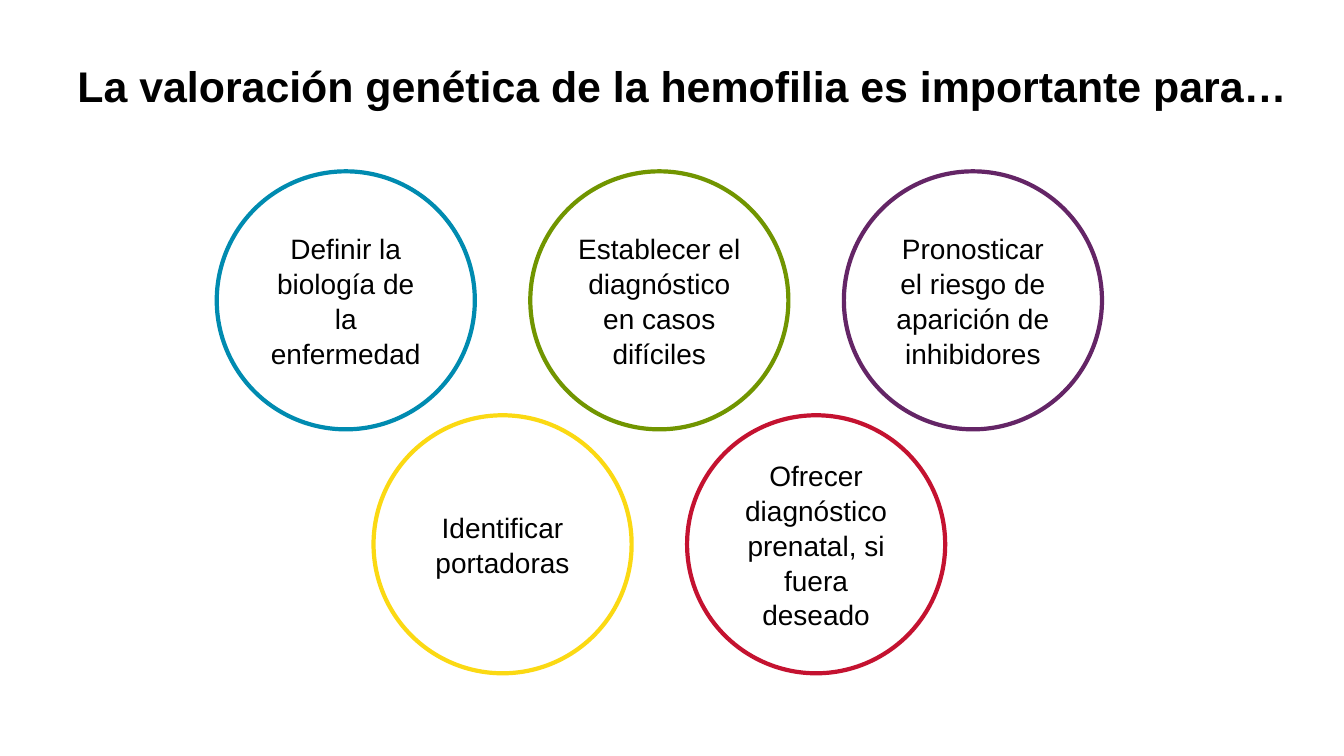
from dataclasses import dataclass

from pptx import Presentation
from pptx import util as u
from pptx.dml.color import RGBColor
from pptx.enum import shapes, text


@dataclass(frozen=True)
class Theme:
    """Colours, font and type sizes of the slide."""
    font: str = "Arial"
    ink: str = "000000"
    paper: str = "FFFFFF"
    blue: str = "008BB0"
    green: str = "719500"
    purple: str = "642566"
    yellow: str = "FBD913"
    red: str = "C41230"
    title_size: float = 30.6
    body_size: float = 20
    ring_width: float = 3


class Deck:
    """Draws elements on the current slide in one theme."""

    def __init__(self, prs, theme):
        self.theme = theme
        self.slide = prs.slides.add_slide(prs.slide_layouts[6])

    def set_words(self, sp, words, size, bold=False,
                  align=text.PP_ALIGN.LEFT, margin=0.1, spacing=1.0):
        """Put one formatted paragraph in a shape."""
        tf = sp.text_frame
        tf.word_wrap = True
        tf.vertical_anchor = text.MSO_ANCHOR.MIDDLE
        tf.margin_left = tf.margin_right = u.Inches(margin)
        tf.text = words
        p = tf.paragraphs[0]
        p.alignment = align
        p.line_spacing = spacing
        for r in p.runs:
            r.font.name = self.theme.font
            r.font.size = u.Pt(size)
            r.font.bold = bold
            r.font.color.rgb = RGBColor.from_string(self.theme.ink)

    def title(self, words, left, top, width, height):
        """Add the slide heading."""
        sp = self.slide.shapes.add_textbox(
            u.Inches(left), u.Inches(top), u.Inches(width), u.Inches(height))
        self.set_words(sp, words, self.theme.title_size, bold=True)

    def ring(self, words, colour, left, top, size):
        """Add an outlined circle with centred text."""
        sp = self.slide.shapes.add_shape(
            shapes.MSO_SHAPE.OVAL, u.Inches(left), u.Inches(top),
            u.Inches(size), u.Inches(size))
        sp.shadow.inherit = False
        sp.fill.solid()
        sp.fill.fore_color.rgb = RGBColor.from_string(self.theme.paper)
        sp.line.color.rgb = RGBColor.from_string(colour)
        sp.line.width = u.Pt(self.theme.ring_width)
        self.set_words(sp, words, self.theme.body_size,
                       align=text.PP_ALIGN.CENTER, margin=0.09, spacing=1.04)


def main():
    """Build and save the slide."""
    prs = Presentation()
    prs.slide_width, prs.slide_height = u.Inches(13.33), u.Inches(7.5)
    theme = Theme()
    deck = Deck(prs, theme)
    deck.title("La valoración genética de la hemofilia es importante para…",
               0.67, 0.25, 12.36, 1.19)

    rows = [
        [("Definir la biología de la enfermedad", theme.blue),
         ("Establecer el diagnóstico en casos difíciles", theme.green),
         ("Pronosticar el riesgo de aparición de inhibidores", theme.purple)],
        [("Identificar portadoras", theme.yellow),
         ("Ofrecer diagnóstico prenatal, si fuera deseado", theme.red)],
    ]
    left, top, size, step_x, step_y = 2.15, 1.7, 2.56, 3.11, 2.42
    for row, goals in enumerate(rows):
        for col, (words, colour) in enumerate(goals):
            deck.ring(words, colour, left + (col + row / 2) * step_x,
                      top + row * step_y, size)
    prs.save("out.pptx")


if __name__ == "__main__":
    main()
